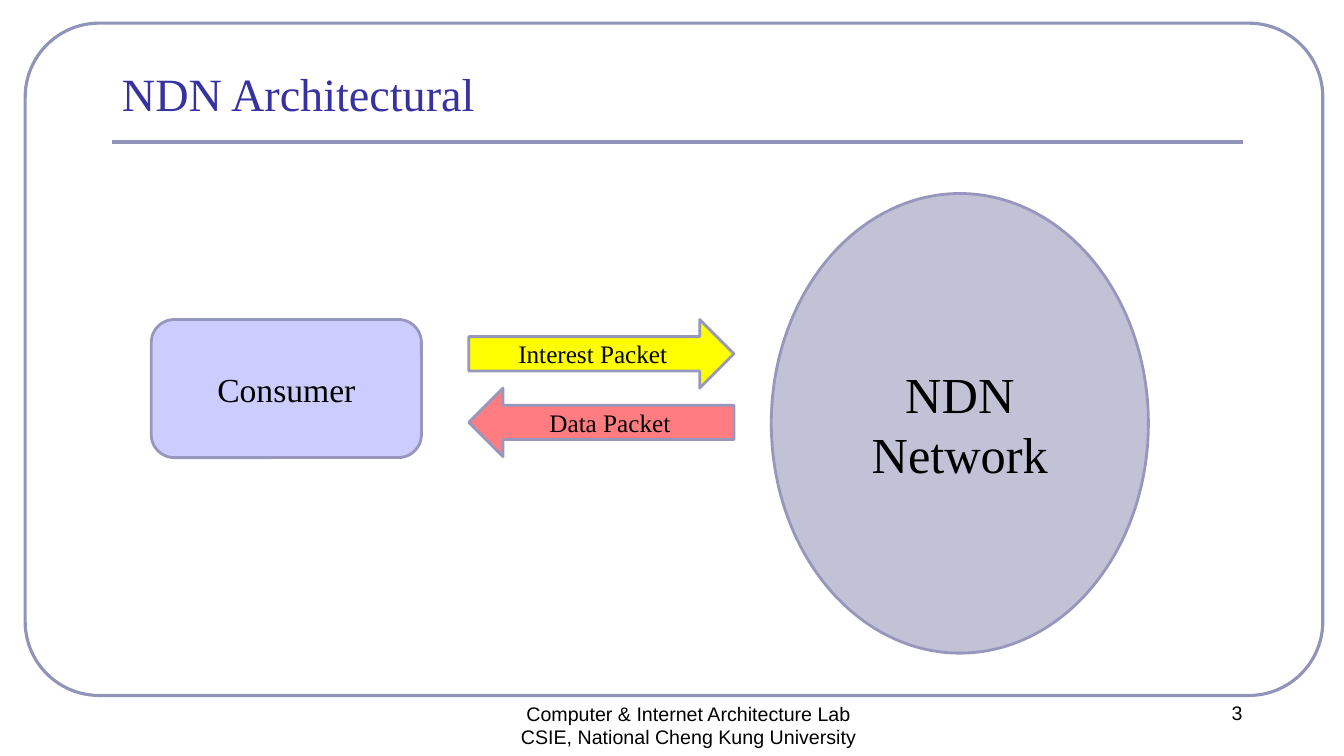
from dataclasses import dataclass
from typing import Optional

from pptx import Presentation
from pptx.dml.color import RGBColor
from pptx.enum.shapes import MSO_CONNECTOR, MSO_SHAPE
from pptx.enum.text import MSO_ANCHOR, MSO_AUTO_SIZE, PP_ALIGN
from pptx.oxml import parse_xml
from pptx.oxml.ns import nsdecls
from pptx.slide import Slide
from pptx.text.text import TextFrame
from pptx.util import Inches, Pt


@dataclass(frozen=True)
class Theme:
    serif: str = "Times New Roman"
    sans: str = "Arial"
    ink: str = "000000"
    title: str = "3732A0"
    frame: str = "9094B8"
    edge: str = "9797BD"
    user: str = "CCCCFF"
    cloud: str = "C2C2D6"
    ask: str = "FFFF00"
    reply: str = "FF7C80"
    head: int = 33
    large: int = 36
    medium: int = 24
    small: int = 18
    note: int = 14


@dataclass(frozen=True)
class Box:
    left: float
    top: float
    width: float
    height: float

    def place(self) -> tuple:
        return tuple(map(Inches, (self.left, self.top, self.width, self.height)))


@dataclass(frozen=True)
class Node:
    kind: MSO_SHAPE
    box: Box
    line: str
    weight: float
    fill: Optional[str] = None
    text: str = ""
    size: int = 18
    round: Optional[float] = None


@dataclass(frozen=True)
class Note:
    box: Box
    text: str


THEME = Theme()
LANE = Box(4.65, 3.17, 2.63, 0.68)
FRAME = Node(MSO_SHAPE.ROUNDED_RECTANGLE, Box(0.25, 0.23, 12.87, 6.67),
             THEME.frame, 2.25, round=0.11)
NODES = (
    Node(MSO_SHAPE.ROUNDED_RECTANGLE, Box(1.5, LANE.top, 2.68, 1.37),
         THEME.edge, 2, THEME.user, "Consumer", THEME.medium),
    Node(MSO_SHAPE.OVAL, Box(7.65, 1.92, 3.74, 4.56),
         THEME.edge, 2, THEME.cloud, "NDN\nNetwork", THEME.large),
    Node(MSO_SHAPE.RIGHT_ARROW, LANE,
         THEME.edge, 2, THEME.ask, "Interest Packet", THEME.small),
    Node(MSO_SHAPE.LEFT_ARROW,
         Box(LANE.left, LANE.top + LANE.height, LANE.width, LANE.height),
         THEME.edge, 2, THEME.reply, "Data Packet", THEME.small),
)
NOTES = (
    Note(Box(3.94, 6.91, 5.78, 0.5),
         "Computer & Internet Architecture Lab\nCSIE, National Cheng Kung University"),
    Note(Box(11.55, 6.9, 1.44, 0.5), "3"),
)


def write(frame: TextFrame, text: str, size: int, font: str, color: str,
          align: PP_ALIGN, anchor: MSO_ANCHOR) -> None:
    frame.text = text
    frame.word_wrap = True
    frame.auto_size = MSO_AUTO_SIZE.NONE
    frame.vertical_anchor = anchor
    for para in frame.paragraphs:
        para.alignment = align
        for run in para.runs:
            run.font.size = Pt(size)
            run.font.name = font
            run.font.color.rgb = RGBColor.from_string(color)


def draw_title(slide: Slide, box: Box, text: str) -> None:
    title = slide.shapes.title
    title.left, title.top, title.width, title.height = box.place()
    write(title.text_frame, text, THEME.head, THEME.serif, THEME.title,
          PP_ALIGN.LEFT, MSO_ANCHOR.BOTTOM)


def draw_rule(slide: Slide, left: float, right: float, top: float) -> None:
    rule = slide.shapes.add_connector(
        MSO_CONNECTOR.STRAIGHT, Inches(left), Inches(top), Inches(right), Inches(top))
    rule.line.color.rgb = RGBColor.from_string(THEME.frame)
    rule.line.width = Pt(3)
    rule._element.spPr.append(parse_xml(f"<a:effectLst {nsdecls('a')}/>"))


def draw_node(slide: Slide, node: Node) -> None:
    shape = slide.shapes.add_shape(node.kind, *node.box.place())
    shape.shadow.inherit = False
    shape.line.color.rgb = RGBColor.from_string(node.line)
    shape.line.width = Pt(node.weight)
    if node.round is not None:
        shape.adjustments[0] = node.round
    if node.fill:
        shape.fill.solid()
        shape.fill.fore_color.rgb = RGBColor.from_string(node.fill)
    else:
        shape.fill.background()
    if node.text:
        write(shape.text_frame, node.text, node.size, THEME.serif, THEME.ink,
              PP_ALIGN.CENTER, MSO_ANCHOR.MIDDLE)


def draw_note(slide: Slide, note: Note) -> None:
    label = slide.shapes.add_textbox(*note.box.place())
    write(label.text_frame, note.text, THEME.note, THEME.sans, THEME.ink,
          PP_ALIGN.CENTER, MSO_ANCHOR.TOP)


def main() -> None:
    deck = Presentation()
    deck.slide_width, deck.slide_height = Inches(13.33), Inches(7.5)
    slide = deck.slides.add_slide(deck.slide_layouts.get_by_name("Title Only"))
    draw_node(slide, FRAME)
    draw_rule(slide, 1.11, 12.33, 1.41)
    draw_title(slide, Box(1.11, 0.6, 11.22, 0.65), "NDN Architectural")
    for note in NOTES:
        draw_note(slide, note)
    for node in NODES:
        draw_node(slide, node)
    deck.save("out.pptx")


if __name__ == "__main__":
    main()
